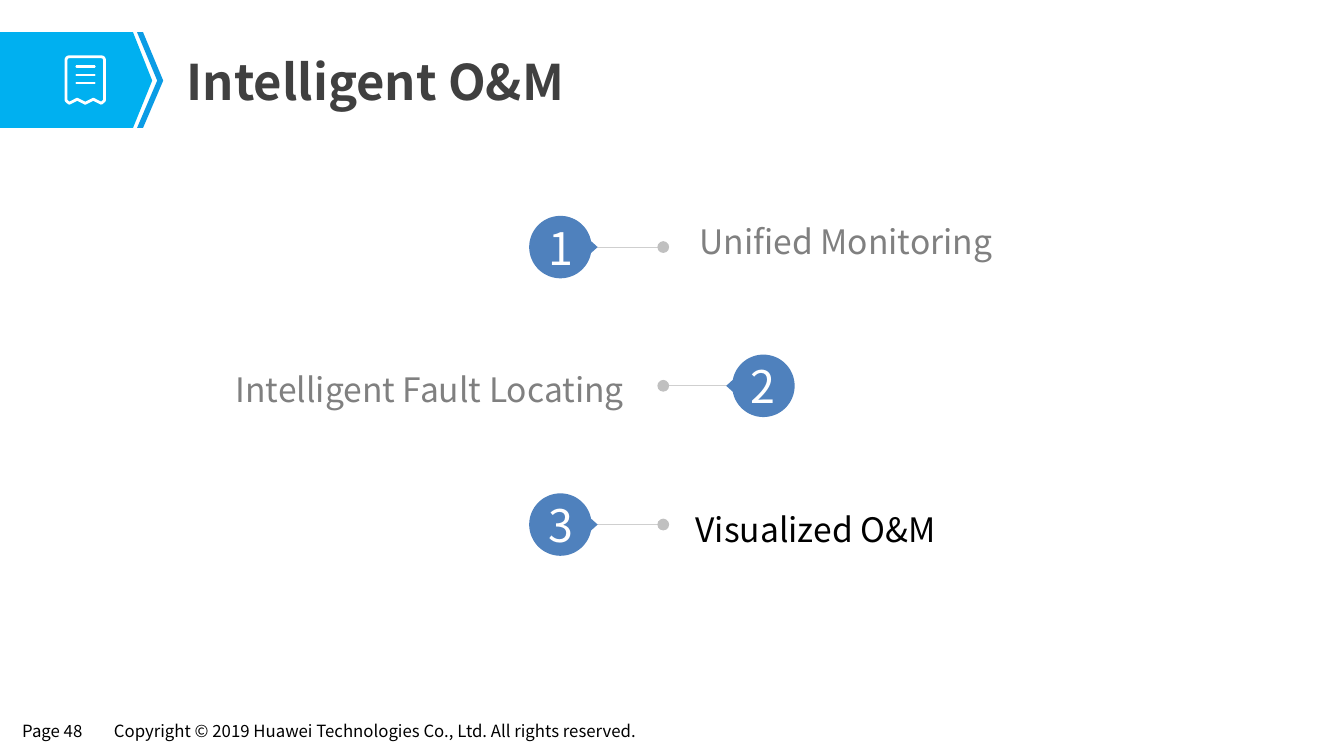
import math
from dataclasses import dataclass

from lxml import etree
from pptx import Presentation
from pptx import util as u
from pptx.dml.color import RGBColor
from pptx.enum import shapes, text
from pptx.oxml import ns

TITLE = "Intelligent O&M"
FOOTER = [
    ("Page 48", 9.4, 60.5),
    ("Copyright © 2019 Huawei Technologies Co., Ltd. All rights reserved.", 74.9, 404),
]
TOPICS = [
    dict(number="1", label="Unified Monitoring", side=1, color="808080", box=(499.7, 132.5, 247, 74.2)),
    dict(number="2", label="Intelligent Fault Locating", side=-1, color="808080", box=(145.4, 237.6, 300.2, 74.2)),
    dict(number="3", label="Visualized O&M", side=1, color="000000", box=(496.8, 337.7, 247, 74.2)),
]
BANNER = [(0, 23), (95, 23), (108.7, 57.6), (95, 91.4), (0, 91.4)]
CHEVRON = [(102.2, 23), (97.9, 23), (112.3, 57.6), (97.9, 91.4), (102.2, 91.4), (116.6, 57.6)]


@dataclass(frozen=True)
class Theme:
    font: str = "Noto Sans CJK SC"
    banner: str = "00B0F0"
    chevron: str = "0B9CE5"
    white: str = "FFFFFF"
    heading: str = "404040"
    black: str = "000000"
    ball: str = "4F81BD"
    dot: str = "C0C0C0"
    rule: str = "CFCFCF"
    title_size: int = 35
    number_size: int = 32
    label_size: int = 24
    footer_size: int = 12


THEME = Theme()
FIRST_Y, STEP_Y = 176.5, 99.1
DOT_X, DOT_SIZE = 473.8, 8.4
BALL_RADIUS, TIP_REACH = 22.3, 26.6
BALL_X = {1: 400.3, -1: 545.3}

deck = Presentation()
deck.slide_width, deck.slide_height = u.Pt(960), u.Pt(540)
slide = deck.slides.add_slide(deck.slide_layouts[6])


def write(frame, words, *, size, color, bold=False, align=text.PP_ALIGN.LEFT,
          anchor=text.MSO_ANCHOR.MIDDLE, insets=(0, 0, 0, 0), spacing=None, wrap=True):
    frame.word_wrap = wrap
    frame.vertical_anchor = anchor
    frame.margin_left, frame.margin_top, frame.margin_right, frame.margin_bottom = map(u.Pt, insets)
    paragraph = frame.paragraphs[0]
    paragraph.alignment = align
    if spacing:
        paragraph.line_spacing = spacing
    run = paragraph.add_run()
    run.text = words
    run.font.size, run.font.bold, run.font.name = u.Pt(size), bold, THEME.font
    run.font.color.rgb = RGBColor.from_string(color)
    etree.SubElement(run.font._element, ns.qn("a:ea"), typeface=THEME.font)


def text_box(words, box, **style):
    write(slide.shapes.add_textbox(*map(u.Pt, box)).text_frame, words, **style)


def paint(shape, color):
    shape.shadow.inherit = False
    shape.fill.solid()
    shape.fill.fore_color.rgb = RGBColor.from_string(color)
    shape.line.fill.background()
    return shape


def outline(points):
    corners = [(u.Pt(x), u.Pt(y)) for x, y in points]
    builder = slide.shapes.build_freeform(*corners[0])
    builder.add_line_segments(corners[1:], close=True)
    return builder.convert_to_shape()


def rule(x1, x2, y, color, width):
    line = slide.shapes.add_connector(shapes.MSO_CONNECTOR.STRAIGHT, *map(u.Pt, (x1, y, x2, y)))
    line.line.color.rgb = RGBColor.from_string(color)
    line.line.width = u.Pt(width)
    etree.SubElement(line._element.spPr, ns.qn("a:effectLst"))
    return line


def arc(cx, cy, radius, start, stop, steps):
    angles = [math.radians(start + (stop - start) * i / steps) for i in range(steps + 1)]
    return [(cx + radius * math.cos(a), cy + radius * math.sin(a)) for a in angles]


def receipt_icon():
    left, right, top, bottom, corner = 47.2, 74.6, 40.6, 73.8, 2.2
    tooth = (right - left - 2 * corner) / 4
    teeth = [(right - corner - tooth * i, bottom - 2.9 * (i % 2)) for i in range(5)]
    upper = arc(left + corner, top + corner, corner, 180, 270, 6)
    upper += arc(right - corner, top + corner, corner, 270, 360, 6)
    receipt = outline(upper + [(right, bottom - 2)] + teeth + [(left, bottom - 2)])
    receipt.shadow.inherit = False
    receipt.fill.background()
    receipt.line.color.rgb = RGBColor.from_string(THEME.white)
    receipt.line.width = u.Pt(2)
    for row in range(3):
        entry = rule(54.6, 67.6, 47.5 + 5.9 * row, THEME.white, 1.6)
        entry.line._ln.set("cap", "rnd")


def topic_row(index, number, label, side, color, box):
    y = FIRST_Y + STEP_Y * index
    ball_x = BALL_X[side]
    rule(DOT_X, ball_x + side * (TIP_REACH - 2), y, THEME.rule, 0.5)
    align = text.PP_ALIGN.LEFT if side > 0 else text.PP_ALIGN.RIGHT
    text_box(label, box, size=THEME.label_size, color=color, align=align, spacing=1.2)
    dot = slide.shapes.add_shape(
        shapes.MSO_SHAPE.OVAL, u.Pt(DOT_X - DOT_SIZE / 2), u.Pt(y - DOT_SIZE / 2), u.Pt(DOT_SIZE), u.Pt(DOT_SIZE))
    paint(dot, THEME.dot)
    rim = arc(0, 0, BALL_RADIUS, 11, 349, 72) + [(TIP_REACH, 0)]
    ball = paint(outline([(ball_x + side * dx, y + dy) for dx, dy in rim]), THEME.ball)
    insets = (0, 0, 2.9, 0) if side > 0 else (2.9, 0, 0, 0)
    write(ball.text_frame, number, size=THEME.number_size, color=THEME.white,
          align=text.PP_ALIGN.CENTER, insets=insets)


for words, left, width in FOOTER:
    text_box(words, (left, 511.9, width, 20.9), size=THEME.footer_size, color=THEME.black,
             anchor=text.MSO_ANCHOR.TOP, insets=(6.5, 2.9, 6.5, 2.9), wrap=False)
paint(outline(BANNER), THEME.banner)
paint(outline(CHEVRON), THEME.chevron)
receipt_icon()
text_box(TITLE, (125.3, 32.4, 774, 50.4), size=THEME.title_size, color=THEME.heading,
         bold=True, insets=(7.9, 4.3, 7.9, 4.3))
for index, topic in enumerate(TOPICS):
    topic_row(index, **topic)

deck.save("out.pptx")
